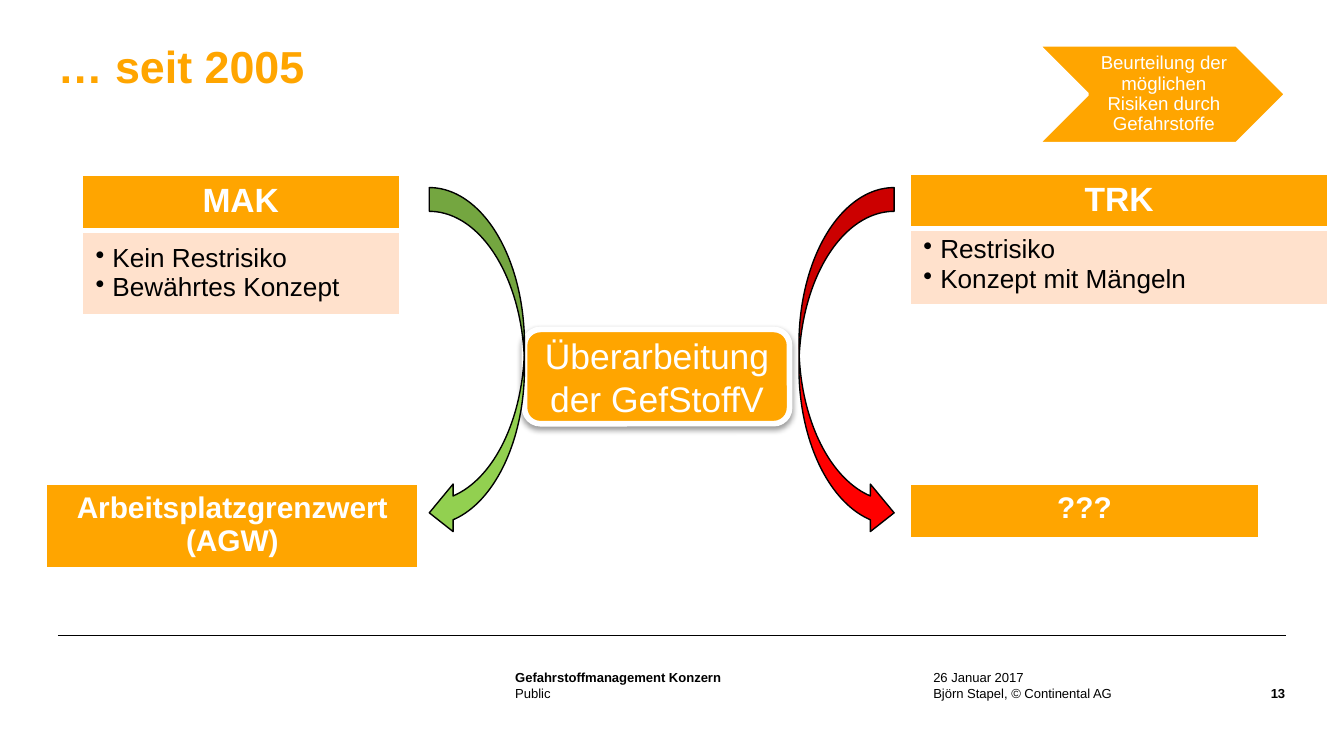
"""Build the slide on the move from MAK and TRK values to the AGW since 2005."""
import lxml.etree
import pptx
import pptx.dml.color
import pptx.enum.shapes
import pptx.enum.text
import pptx.oxml.ns
import pptx.util

Pt = pptx.util.Pt
RGB = pptx.dml.color.RGBColor.from_string
qn = pptx.oxml.ns.qn
SHAPE = pptx.enum.shapes.MSO_SHAPE
ALIGN = pptx.enum.text.PP_ALIGN
ANCHOR = pptx.enum.text.MSO_ANCHOR


class Theme:
    font = "Arial"
    orange, peach, white, black = "FFA500", "FFE1CC", "FFFFFF", "000000"
    red, green = "FF0000", "92D050"
    title, center, heading, result, body, step, footer = 24, 19, 18, 16, 14, 10, 7


def write(frame, lines, size, color, bold=False, align=ALIGN.LEFT, spacing=None, bullet=False):
    frame.word_wrap = True
    frame.text = "\n".join(lines)
    for paragraph in frame.paragraphs:
        paragraph.alignment = align
        if spacing:
            paragraph.line_spacing = spacing
        if bullet:
            properties = paragraph._p.get_or_add_pPr()
            properties.set("marL", str(Pt(9)))
            properties.set("indent", str(-Pt(9)))
            lxml.etree.SubElement(properties, qn("a:buChar"), char="•")
        for run in paragraph.runs:
            run.font.name = Theme.font
            run.font.size = Pt(size)
            run.font.bold = bold
            run.font.color.rgb = RGB(color)


def add_block(kind, box, fill, line, width):
    block = slide.shapes.add_shape(kind, *map(Pt, box))
    block.shadow.inherit = False
    block.fill.solid()
    block.fill.fore_color.rgb = RGB(fill)
    block.line.color.rgb = RGB(line)
    block.line.width = Pt(width)
    return block


deck = pptx.Presentation()
deck.slide_width, deck.slide_height = Pt(720), Pt(405)
slide = deck.slides.add_slide(deck.slide_layouts[6])

footer_rule = slide.shapes.add_connector(
    pptx.enum.shapes.MSO_CONNECTOR.STRAIGHT, Pt(31), Pt(340.5), Pt(689), Pt(340.5))
footer_rule.line.color.rgb = RGB(Theme.black)
footer_rule.line.width = Pt(0.35)
lxml.etree.SubElement(footer_rule._element.spPr, qn("a:effectLst"))

labels = [
    ((31, 21, 658, 57), "… seit 2005", Theme.title, Theme.orange, True, ALIGN.LEFT, 0.95, (0, 2, 7, 0), ANCHOR.TOP),
    ((276, 367, 214, 8), "Public", Theme.footer, Theme.black, False, ALIGN.LEFT, None, (0,) * 4, ANCHOR.TOP),
    ((276, 359, 214, 8), "Gefahrstoffmanagement Konzern", Theme.footer, Theme.black, True, ALIGN.LEFT, None,
     (0,) * 4, ANCHOR.BOTTOM),
    ((500, 358.5, 158, 8.5), "26 Januar 2017", Theme.footer, Theme.black, False, ALIGN.LEFT, None,
     (0,) * 4, ANCHOR.BOTTOM),
    ((500, 367, 158, 8.5), "Björn Stapel, © Continental AG", Theme.footer, Theme.black, False, ALIGN.LEFT, None,
     (0,) * 4, ANCHOR.TOP),
    ((660.5, 367, 28, 8.5), "13", Theme.footer, Theme.black, True, ALIGN.RIGHT, None, (0,) * 4, ANCHOR.TOP),
    ((582.5, 24, 80, 53), "Beurteilung der möglichen Risiken durch Gefahrstoffe", Theme.step, Theme.white, False,
     ALIGN.CENTER, 0.9, (3, 1, 1, 1), ANCHOR.MIDDLE),
]

add_block(SHAPE.CHEVRON, (556, 24, 133, 53), Theme.orange, Theme.white, 2)
for box, text, size, color, bold, align, spacing, insets, anchor in labels:
    frame = slide.shapes.add_textbox(*map(Pt, box)).text_frame
    frame.margin_left, frame.margin_top, frame.margin_right, frame.margin_bottom = map(Pt, insets)
    frame.vertical_anchor = anchor
    write(frame, [text], size, color, bold, align, spacing)

revision = add_block(SHAPE.ROUNDED_RECTANGLE, (281, 176.5, 142, 50.5), Theme.orange, Theme.white, 3)
revision.text_frame.vertical_anchor = ANCHOR.MIDDLE
write(revision.text_frame, ["Überarbeitung der GefStoffV"], Theme.center, Theme.white, align=ALIGN.CENTER)
shadow = lxml.etree.SubElement(
    revision._element.spPr.find(qn("a:effectLst")), qn("a:outerShdw"),
    blurRad=str(Pt(3.1)), dist=str(Pt(1.6)), dir="5400000", rotWithShape="0")
shadow_color = lxml.etree.SubElement(shadow, qn("a:srgbClr"), val=Theme.black)
lxml.etree.SubElement(shadow_color, qn("a:alpha"), val="38000")

limits = [
    ((44, 94, 170), (29.5, 45), Theme.heading, ["MAK"], ["Kein Restrisiko", "Bewährtes Konzept"], 7),
    ((487.5, 93.5, 224), (27.5, 39), Theme.heading, ["TRK"], ["Restrisiko", "Konzept mit Mängeln"], 3.6),
    ((25, 259.5, 199), (42.5,), Theme.result, ["Arbeitsplatzgrenzwert", "(AGW)"], None, 0),
    ((487.5, 259.5, 187), (29.5,), Theme.result, ["???"], None, 0),
]

for (left, top, width), heights, size, heading, points, points_inset in limits:
    limit = slide.shapes.add_table(
        len(heights), 1, Pt(left), Pt(top), Pt(width), Pt(sum(heights))).table
    limit.first_row = limit.horz_banding = False
    for row, height in enumerate(heights):
        limit.rows[row].height = Pt(height)
        cell = limit.cell(row, 0)
        for side in "LRTB":
            border = lxml.etree.SubElement(
                cell._tc.get_or_add_tcPr(), qn(f"a:ln{side}"),
                w=str(Pt(3 if (row, side) in ((0, "B"), (1, "T")) else 1)))
            border_fill = lxml.etree.SubElement(border, qn("a:solidFill"))
            lxml.etree.SubElement(border_fill, qn("a:srgbClr"), val=Theme.white)
        cell.fill.solid()
        cell.fill.fore_color.rgb = RGB(Theme.peach if row else Theme.orange)
        if row:
            cell.margin_top = Pt(points_inset)
            write(cell.text_frame, points, Theme.body, Theme.black, bullet=True)
        else:
            write(cell.text_frame, heading, size, Theme.white, True, ALIGN.CENTER)

for left, color, flipped in ((428, Theme.red, False), (230, Theme.green, True)):
    change = add_block(SHAPE.CURVED_RIGHT_ARROW, (left, 100.5, 51, 187), color, Theme.black, 0.75)
    if flipped:
        change._element.spPr.find(qn("a:xfrm")).set("flipH", "1")

deck.save("out.pptx")
